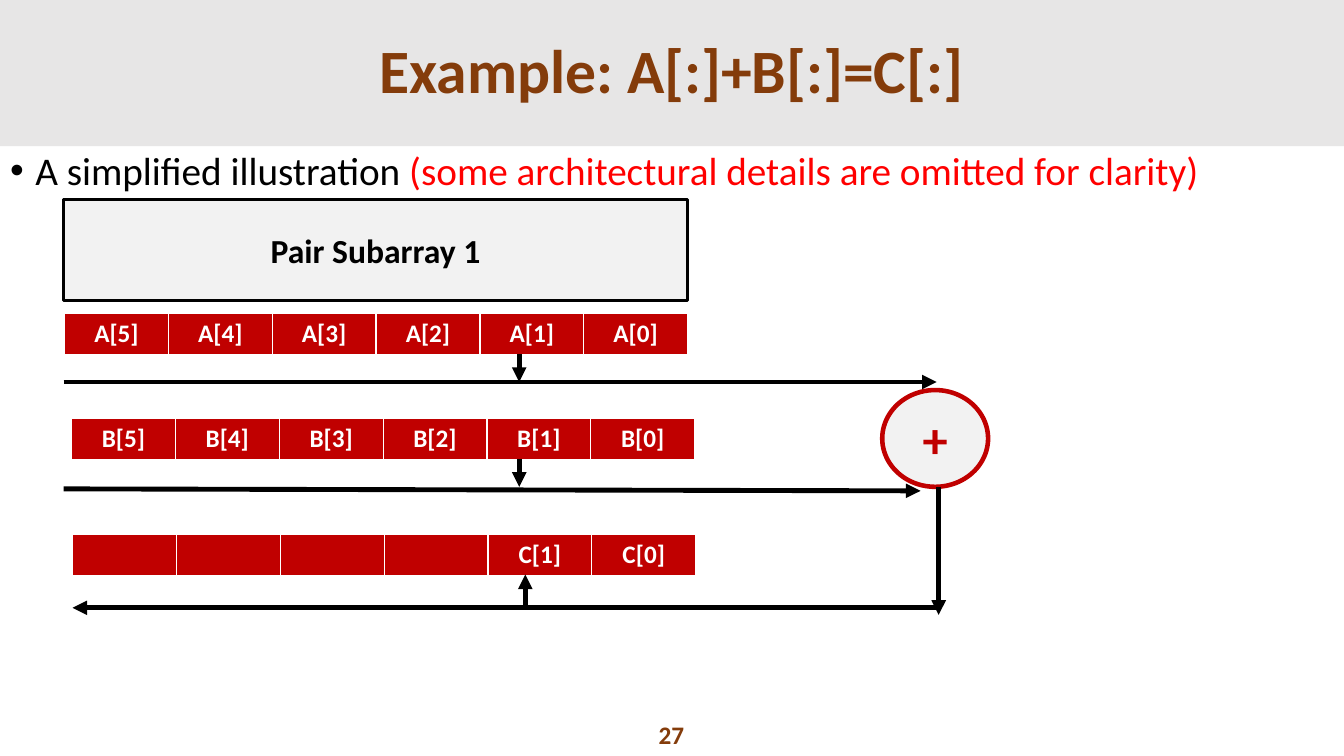
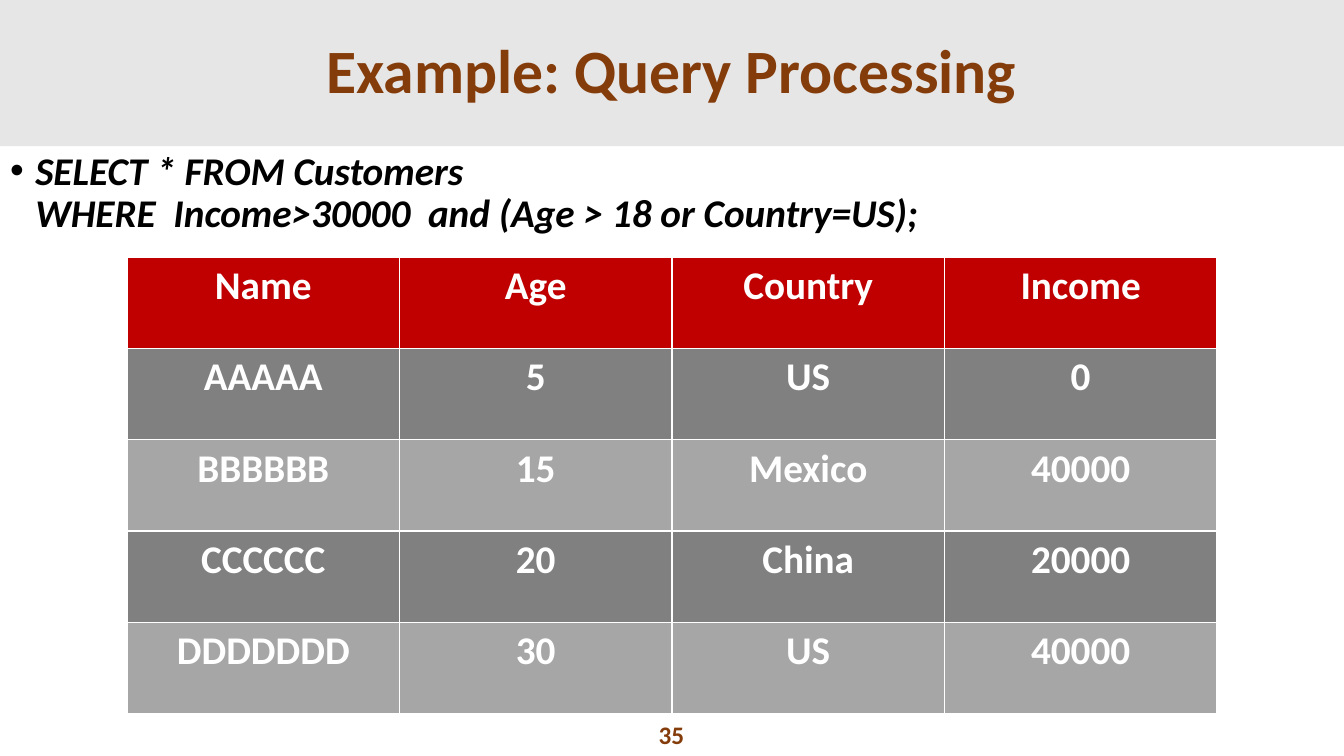
from dataclasses import dataclass
from typing import NamedTuple

from lxml.etree import SubElement
from pptx import Presentation
from pptx.dml.color import RGBColor
from pptx.enum.shapes import MSO_CONNECTOR, MSO_SHAPE
from pptx.enum.text import MSO_ANCHOR, MSO_AUTO_SIZE, PP_ALIGN
from pptx.oxml.ns import qn
from pptx.util import Inches, Pt


@dataclass(frozen=True)
class Theme:
    font: str = "Calibri"
    brown: str = "843C0B"
    red: str = "C00000"
    alert: str = "FF0000"
    black: str = "000000"
    white: str = "FFFFFF"
    band: str = "E7E6E6"
    pale: str = "F2F2F2"
    dark_row: str = "808080"
    light_row: str = "A6A6A6"
    title_size: float = 44
    plus_size: float = 36
    body_size: float = 28
    block_size: float = 24
    small_size: float = 18
    arrow_width: float = 3.5
    cell_border: float = 1


THEME = Theme()


class Box(NamedTuple):
    left: float
    top: float
    width: float
    height: float

    def inner(self, left, top, width, height):
        return Box(self.left + left, self.top + top, width, height)

    def lengths(self):
        return [Inches(value) for value in self]


PAGE = Box(0, 0, 13.33, 7.5)
TITLE_BAND = PAGE.inner(0, 0, PAGE.width, 1.45)
BODY = PAGE.inner(0, TITLE_BAND.height, PAGE.width, 5.4)
PAGE_NUMBER = PAGE.inner(6.15, 7.09, 1.02, 0.4)


def set_values(target, values):
    for name, value in values.items():
        setattr(target, name, value)


def place(part, box):
    set_values(part, dict(zip(("left", "top", "width", "height"), box.lengths())))


def paint(fill, color):
    fill.solid()
    fill.fore_color.rgb = RGBColor.from_string(color)


def add_text(paragraph, text, size, color, bold=True, italic=False):
    for index, line in enumerate(text.split("\n")):
        if index:
            paragraph.add_line_break()
        run = paragraph.add_run()
        run.text = line
        set_values(run.font, {"name": THEME.font, "size": Pt(size),
                              "bold": bold, "italic": italic})
        run.font.color.rgb = RGBColor.from_string(color)


def add_title(slide, box, text):
    title = slide.shapes.title
    place(title, box)
    paint(title.fill, THEME.band)
    set_values(title.text_frame, {"auto_size": MSO_AUTO_SIZE.NONE,
                                  "word_wrap": True,
                                  "vertical_anchor": MSO_ANCHOR.MIDDLE})
    paragraph = title.text_frame.paragraphs[0]
    set_values(paragraph, {"alignment": PP_ALIGN.CENTER, "line_spacing": 0.9})
    add_text(paragraph, text, THEME.title_size, THEME.brown)


def add_body(slide, box, pieces):
    body = slide.placeholders[1]
    place(body, box)
    set_values(body.text_frame, {"auto_size": MSO_AUTO_SIZE.NONE,
                                 "word_wrap": True,
                                 "vertical_anchor": MSO_ANCHOR.TOP})
    paragraph = body.text_frame.paragraphs[0]
    set_values(paragraph, {"line_spacing": 0.9, "space_before": Pt(10)})
    properties = paragraph._p.get_or_add_pPr()
    properties.set("marL", str(Inches(0.25)))
    properties.set("indent", str(Inches(-0.25)))
    SubElement(properties, qn("a:buFont"), typeface="Arial")
    SubElement(properties, qn("a:buChar"), char="•")
    for text, color, emphasis in pieces:
        add_text(paragraph, text, THEME.body_size, color, emphasis, emphasis)


def add_block(slide, box, text, size, color, fill, outline=None,
              outline_width=0, kind=MSO_SHAPE.RECTANGLE):
    block = slide.shapes.add_shape(kind, *box.lengths())
    block.shadow.inherit = False
    paint(block.fill, fill)
    if outline:
        paint(block.line.fill, outline)
        block.line.width = Pt(outline_width)
    else:
        block.line.fill.background()
    block.text_frame.vertical_anchor = MSO_ANCHOR.MIDDLE
    paragraph = block.text_frame.paragraphs[0]
    paragraph.alignment = PP_ALIGN.CENTER
    add_text(paragraph, text, size, color)


def add_arrow(slide, box, start, end):
    points = [Inches(origin + offset) for point in (start, end)
              for origin, offset in zip(box[:2], point)]
    arrow = slide.shapes.add_connector(MSO_CONNECTOR.STRAIGHT, *points)
    paint(arrow.line.fill, THEME.black)
    arrow.line.width = Pt(THEME.arrow_width)
    SubElement(arrow.line._get_or_add_ln(), qn("a:tailEnd"), type="triangle")
    SubElement(arrow._element.spPr, qn("a:effectLst"))


def add_cell_borders(cell):
    properties = cell._tc.get_or_add_tcPr()
    for side in ("lnL", "lnR", "lnT", "lnB"):
        border = SubElement(properties, qn(f"a:{side}"),
                            w=str(Pt(THEME.cell_border)))
        fill = SubElement(border, qn("a:solidFill"))
        SubElement(fill, qn("a:srgbClr"), val=THEME.white)


def add_grid(slide, box, rows, row_fills, size):
    grid = slide.shapes.add_table(len(rows), len(rows[0]), *box.lengths()).table
    set_values(grid, {"first_row": False, "horz_banding": False})
    for column in grid.columns:
        column.width = Inches(box.width / len(rows[0]))
    for row, texts, fill in zip(grid.rows, rows, row_fills):
        row.height = Inches(box.height / len(rows))
        for cell, text in zip(row.cells, texts):
            add_cell_borders(cell)
            paint(cell.fill, fill)
            paragraph = cell.text_frame.paragraphs[0]
            paragraph.alignment = PP_ALIGN.CENTER
            if text:
                add_text(paragraph, text, size, THEME.white)


def add_adder_diagram(slide, box):
    add_block(slide, box.inner(0, 0, 6.19, 1), "Pair Subarray 1",
              THEME.block_size, THEME.black, THEME.pale, THEME.black, 2.25)
    vectors = (
        (0.01, 1.13, [f"A[{index}]" for index in range(5, -1, -1)]),
        (0.08, 2.17, [f"B[{index}]" for index in range(5, -1, -1)]),
        (0.09, 3.32, [""] * 4 + ["C[1]", "C[0]"]),
    )
    for left, top, labels in vectors:
        add_grid(slide, box.inner(left, top, 6.18, 0.4), [labels],
                 [THEME.red], THEME.small_size)
    add_block(slide, box.inner(8.12, 1.89, 1.05, 0.96), "+", THEME.plus_size,
              THEME.red, THEME.pale, THEME.red, 3.25, MSO_SHAPE.OVAL)
    arrows = (
        ((0, 1.81), (8.66, 1.81)),
        ((0, 2.87), (8.5, 2.89)),
        ((4.52, 1.53), (4.52, 1.81)),
        ((4.52, 2.57), (4.52, 2.85)),
        ((8.68, 2.85), (8.68, 4.12)),
        ((8.68, 4.05), (0.09, 4.05)),
        ((4.58, 4.05), (4.58, 3.72)),
    )
    for start, end in arrows:
        add_arrow(slide, box, start, end)


def add_customers(slide, box):
    rows = (
        ("Name", "Age", "Country", "Income"),
        ("AAAAA", "5", "US", "0"),
        ("BBBBBB", "15", "Mexico", "40000"),
        ("CCCCCC", "20", "China", "20000"),
        ("DDDDDDD", "30", "US", "40000"),
    )
    fills = [THEME.red] + [THEME.dark_row, THEME.light_row] * 2
    add_grid(slide, box, rows, fills, THEME.body_size)


def add_slide(deck, title, pieces, number):
    slide = deck.slides.add_slide(deck.slide_layouts[1])
    add_title(slide, TITLE_BAND, title)
    add_body(slide, BODY, pieces)
    add_block(slide, PAGE_NUMBER, number, THEME.small_size, THEME.brown,
              THEME.white)
    return slide


def main():
    deck = Presentation()
    set_values(deck, {"slide_width": Inches(PAGE.width),
                      "slide_height": Inches(PAGE.height)})
    addition = add_slide(deck, "Example: A[:]+B[:]=C[:]", (
        ("A simplified illustration ", THEME.black, False),
        ("(some architectural details are omitted for clarity)",
         THEME.alert, False),
    ), "27")
    add_adder_diagram(addition, Box(0.63, 1.98, 9.17, 4.12))
    query = add_slide(deck, "Example: Query Processing", (
        ("SELECT * FROM Customers\n"
         "WHERE  Income>30000  and (Age > 18 or Country=US);",
         THEME.black, True),
    ), "35")
    add_customers(query, Box(1.26, 2.55, 10.81, 4.53))
    deck.save("out.pptx")


if __name__ == "__main__":
    main()
